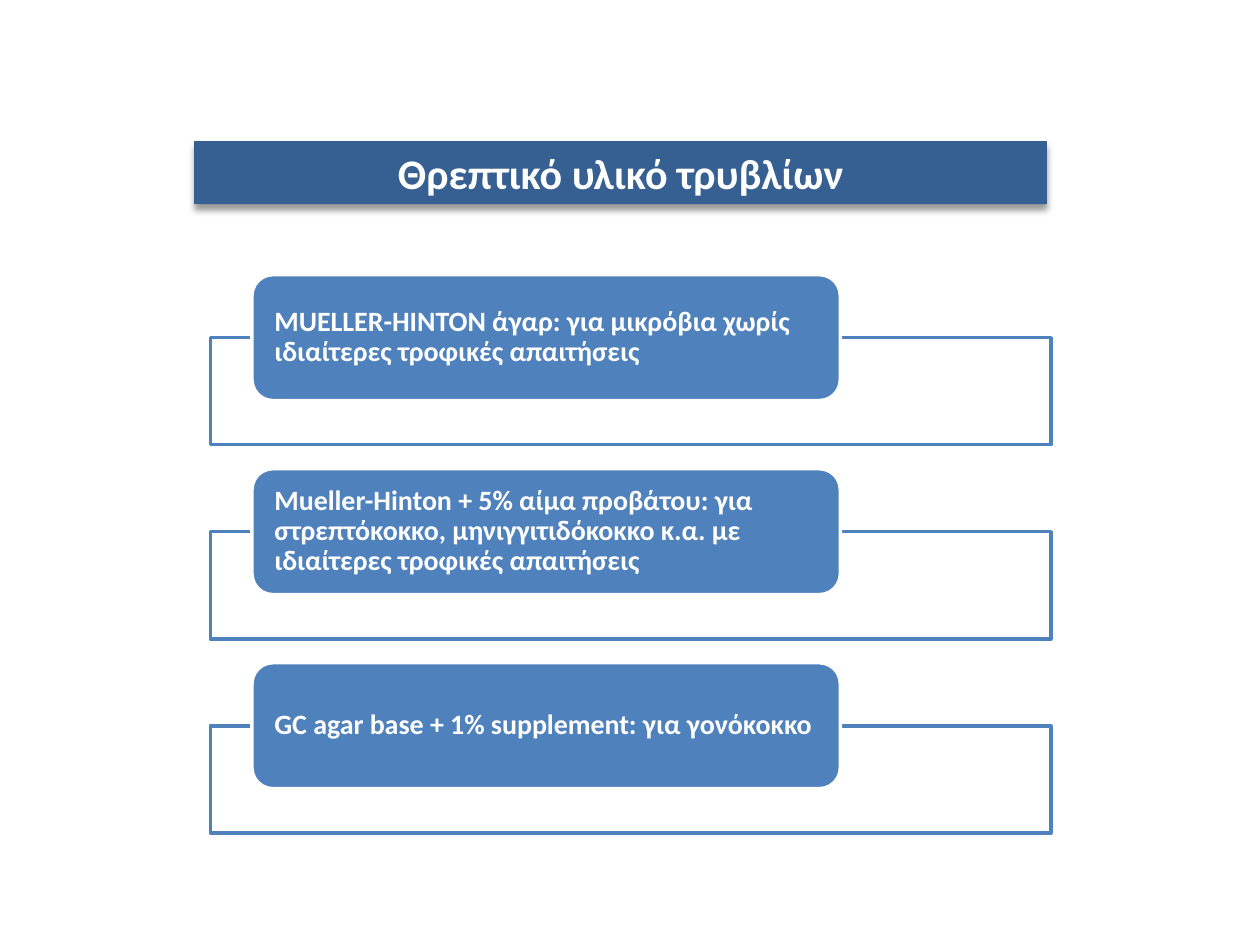
from lxml import etree
from pptx import Presentation
from pptx.dml.color import RGBColor
from pptx.enum.shapes import MSO_SHAPE
from pptx.enum.text import MSO_ANCHOR, PP_ALIGN
from pptx.oxml.ns import qn
from pptx.util import Inches, Pt

RECTANGLE = MSO_SHAPE.RECTANGLE
ROUNDED = MSO_SHAPE.ROUNDED_RECTANGLE
MIDDLE = MSO_ANCHOR.MIDDLE
LEFT, CENTER = PP_ALIGN.LEFT, PP_ALIGN.CENTER
NAVY = RGBColor(0x37, 0x60, 0x92)
BLUE = RGBColor(0x4F, 0x81, 0xBD)
WHITE = RGBColor(0xFF, 0xFF, 0xFF)

TITLE = "Θρεπτικό υλικό τρυβλίων"
MEDIA = [
    "MUELLER-HINTON άγαρ: για μικρόβια χωρίς ιδιαίτερες τροφικές απαιτήσεις",
    "Mueller-Hinton + 5% αίμα προβάτου: για στρεπτόκοκκο, μηνιγγιτιδόκοκκο κ.α. "
    "με ιδιαίτερες τροφικές απαιτήσεις",
    "GC agar base + 1% supplement: για γονόκοκκο",
]
FIRST_TOP = 2.18
ROW_PITCH = 1.54


class SlideBuilder:
    """Draws the title bar, frames and labels in one shared style."""

    font_name = "Calibri"

    def __init__(self, slide):
        self.slide = slide

    def box(self, kind, left, top, width, height, fill, line=None):
        shape = self.slide.shapes.add_shape(
            kind, Inches(left), Inches(top), Inches(width), Inches(height))
        shape.shadow.inherit = False
        shape.fill.solid()
        shape.fill.fore_color.rgb = fill
        if line is None:
            shape.line.fill.background()
        else:
            shape.line.color.rgb = line
            shape.line.width = Pt(2)
        return shape

    def set_text(self, shape, text, size, alignment):
        frame = shape.text_frame
        frame.word_wrap = True
        frame.vertical_anchor = MIDDLE
        paragraph = frame.paragraphs[0]
        paragraph.text = text
        paragraph.alignment = alignment
        paragraph.font.name = self.font_name
        paragraph.font.size = Pt(size)
        paragraph.font.bold = True
        paragraph.font.color.rgb = WHITE
        return frame

    def title_bar(self, text):
        shape = self.box(RECTANGLE, 1.54, 1.12, 6.77, 0.5, NAVY)
        self.set_text(shape, text, 24, CENTER)
        effects = shape._element.spPr.find(qn("a:effectLst"))
        shadow = etree.SubElement(
            effects, qn("a:outerShdw"), blurRad=str(Pt(4)), dist=str(Pt(3)),
            dir="5400000", rotWithShape="0")
        color = etree.SubElement(shadow, qn("a:srgbClr"), val="000000")
        etree.SubElement(color, qn("a:alpha"), val="40000")

    def frame(self, top):
        self.box(RECTANGLE, 1.67, top, 6.67, 0.85, WHITE, BLUE)

    def label(self, top, text):
        shape = self.box(ROUNDED, 2, top, 4.67, 1, BLUE, WHITE)
        frame = self.set_text(shape, text, 16, LEFT)
        frame.margin_left = frame.margin_right = Inches(0.13)
        frame.margin_top = frame.margin_bottom = 0
        frame.paragraphs[0].line_spacing = 0.9


def main():
    presentation = Presentation()
    presentation.slide_width = Inches(10)
    presentation.slide_height = Inches(7.5)
    builder = SlideBuilder(presentation.slides.add_slide(presentation.slide_layouts[6]))
    builder.title_bar(TITLE)
    for row, text in enumerate(MEDIA):
        top = FIRST_TOP + row * ROW_PITCH
        builder.frame(top + 0.5)
        builder.label(top, text)
    presentation.save("out.pptx")


if __name__ == "__main__":
    main()
